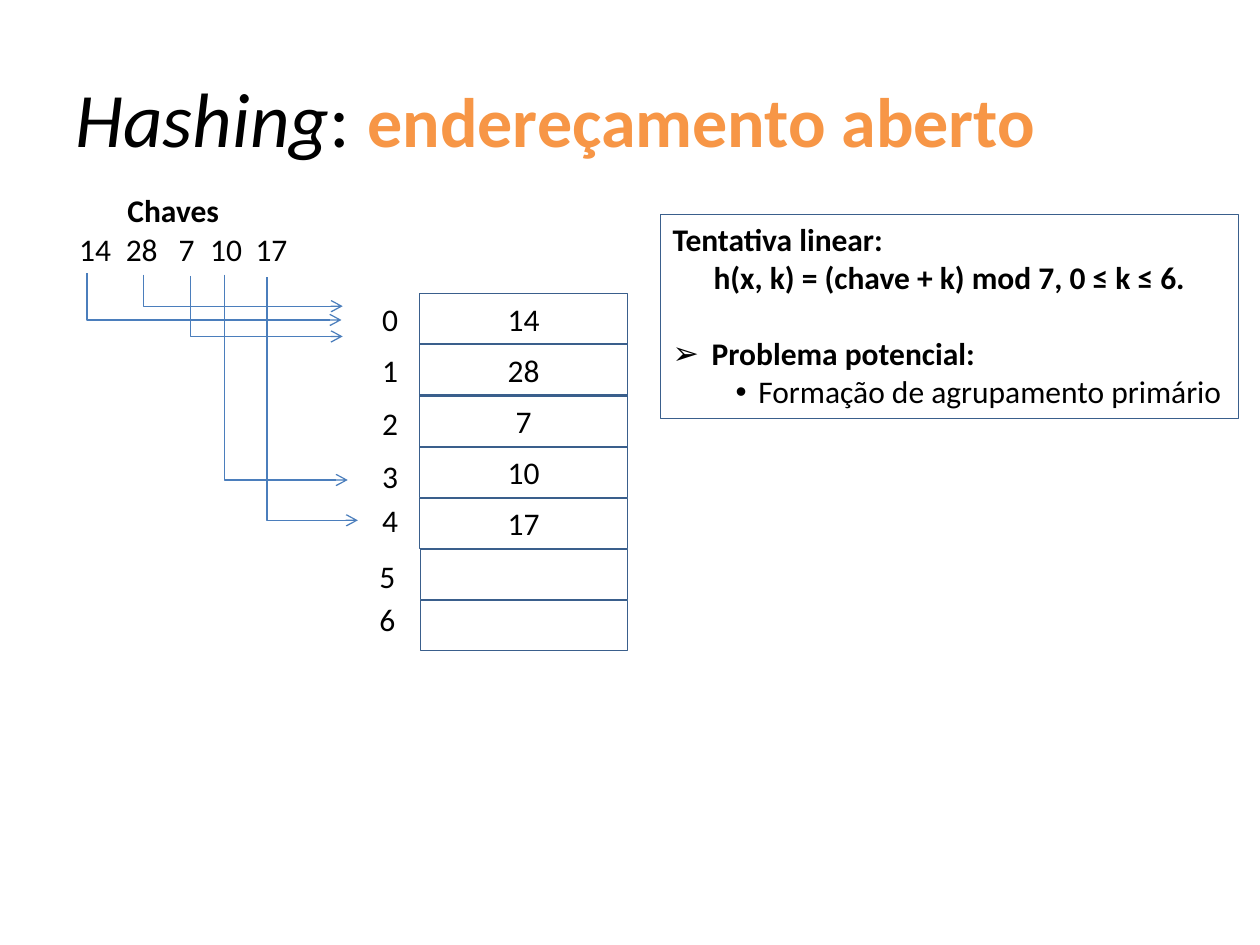
from lxml import etree
from pptx import Presentation
from pptx import util as u
from pptx.dml.color import RGBColor
from pptx.enum import shapes, text
from pptx.oxml import ns

COLORS = {"text": "000000", "accent": "F79646", "border": "3A5F8C", "arrow": "4B7EBC"}
FONT = "Calibri"
CENTER = text.PP_ALIGN.CENTER
ROW_TOP, ROW_STEP = 2.33, 0.406
STORED = ["14", "28", "7", "10", "17", "", ""]
INDEXES = [(2.84, 2.33), (2.84, 2.74), (2.84, 3.16), (2.84, 3.58),
           (2.84, 3.93), (2.82, 4.37), (2.82, 4.71)]
KEY_TABS = [0.37, 0.79, 1.04, 1.4]
ARROWS = [(0.69, 2.17, 2.71, 2.54), (1.14, 2.18, 2.72, 2.43),
          (1.51, 2.19, 2.72, 2.67), (1.78, 2.18, 2.76, 3.81),
          (2.12, 2.2, 2.84, 4.13)]


def color(name):
    return RGBColor.from_string(COLORS[name])


def add_child(parent, tag, **attributes):
    return etree.SubElement(parent, ns.qn(tag), attributes)


def style(font, size=18, bold=False, name="text"):
    font.name, font.size, font.bold = FONT, u.Pt(size), bold
    font.color.rgb = color(name)


def write(para, content, bold=False, align=text.PP_ALIGN.LEFT):
    para.add_run().text = content
    para.alignment = align
    style(para.font, bold=bold)


def add_label(slide, left, top, width, content, bold=False, align=CENTER):
    box = slide.shapes.add_textbox(*map(u.Inches, (left, top, width, 0.4)))
    box.text_frame.word_wrap = True
    para = box.text_frame.paragraphs[0]
    write(para, content, bold, align)
    return para


def add_box(slide, left, top, width, height):
    box = slide.shapes.add_shape(
        shapes.MSO_SHAPE.RECTANGLE, *map(u.Inches, (left, top, width, height)))
    box.shadow.inherit = False
    box.fill.background()
    box.line.color.rgb = color("border")
    box.line.width = u.Pt(0.75)
    box.text_frame.word_wrap = True
    box.text_frame.vertical_anchor = text.MSO_ANCHOR.TOP
    return box


def add_arrow(slide, *ends):
    arrow = slide.shapes.add_connector(
        shapes.MSO_CONNECTOR.ELBOW, *map(u.Inches, ends))
    arrow.line.color.rgb = color("arrow")
    arrow.line.width = u.Pt(0.75)
    properties = arrow._element.spPr
    guides = properties.find(ns.qn("a:prstGeom")).get_or_add_avLst()
    add_child(guides, "a:gd", name="adj1", fmla="val 0")
    add_child(arrow.line._get_or_add_ln(), "a:tailEnd", type="arrow")
    add_child(properties, "a:effectLst")


def set_bullet(para, symbol, margin, hanging):
    properties = para._p.get_or_add_pPr()
    properties.set("marL", str(u.Inches(margin)))
    properties.set("indent", str(-u.Inches(hanging)))
    bullet_font = etree.Element(ns.qn("a:buFont"), typeface="Arial")
    bullet = etree.Element(ns.qn("a:buChar"), char=symbol)
    defaults = properties.find(ns.qn("a:defRPr"))
    defaults.addprevious(bullet_font)
    defaults.addprevious(bullet)


def add_title(slide):
    box = slide.shapes.add_textbox(*map(u.Inches, (0.5, 0.3, 9, 1.25)))
    frame = box.text_frame
    frame.word_wrap = True
    frame.vertical_anchor = text.MSO_ANCHOR.MIDDLE
    para = frame.paragraphs[0]
    for content, size, bold, italic, name in (
            ("Hashing", 44, False, True, "text"),
            (": ", 44, False, False, "text"),
            ("endereçamento aberto", 40, True, False, "accent")):
        span = para.add_run()
        span.text = content
        style(span.font, size, bold, name)
        span.font.italic = italic


def add_keys(slide):
    add_label(slide, 0.2, 1.47, 2.35, "Chaves", bold=True)
    para = add_label(slide, 0.53, 1.78, 2.3, "\t".join(STORED[:5]),
                     align=text.PP_ALIGN.LEFT)
    stops = etree.Element(ns.qn("a:tabLst"))
    for position in KEY_TABS:
        add_child(stops, "a:tab", pos=str(u.Inches(position)), algn="l")
    para._p.pPr.find(ns.qn("a:defRPr")).addprevious(stops)


def add_hash_table(slide):
    for row, (value, (left, top)) in enumerate(zip(STORED, INDEXES)):
        cell_left = 3.33 if value else 3.34
        cell = add_box(slide, cell_left, ROW_TOP + row * ROW_STEP,
                       4.98 - cell_left, 0.4)
        if value:
            write(cell.text_frame.paragraphs[0], value, align=CENTER)
        add_label(slide, left, top, 0.51, str(row))


def add_probing_note(slide):
    frame = add_box(slide, 5.24, 1.7, 4.59, 1.62).text_frame
    heading = frame.paragraphs[0]
    formula, problem, detail = (frame.add_paragraph() for _ in range(3))
    write(heading, "Tentativa linear:", bold=True)
    write(formula, "h(x, k) = (chave + k) mod 7, 0 ≤ k ≤ 6.", True, CENTER)
    write(problem, "Problema potencial:", bold=True)
    write(detail, "Formação de agrupamento primário")
    problem.space_before = u.Pt(22)
    detail.level = 1
    set_bullet(problem, "➢", 0.31, 0.31)
    set_bullet(detail, "•", 0.68, 0.18)


def main():
    deck = Presentation()
    deck.slide_width, deck.slide_height = u.Inches(10), u.Inches(7.5)
    slide = deck.slides.add_slide(deck.slide_layouts[6])
    add_title(slide)
    add_keys(slide)
    for ends in ARROWS:
        add_arrow(slide, *ends)
    add_hash_table(slide)
    add_probing_note(slide)
    deck.save("out.pptx")


if __name__ == "__main__":
    main()
